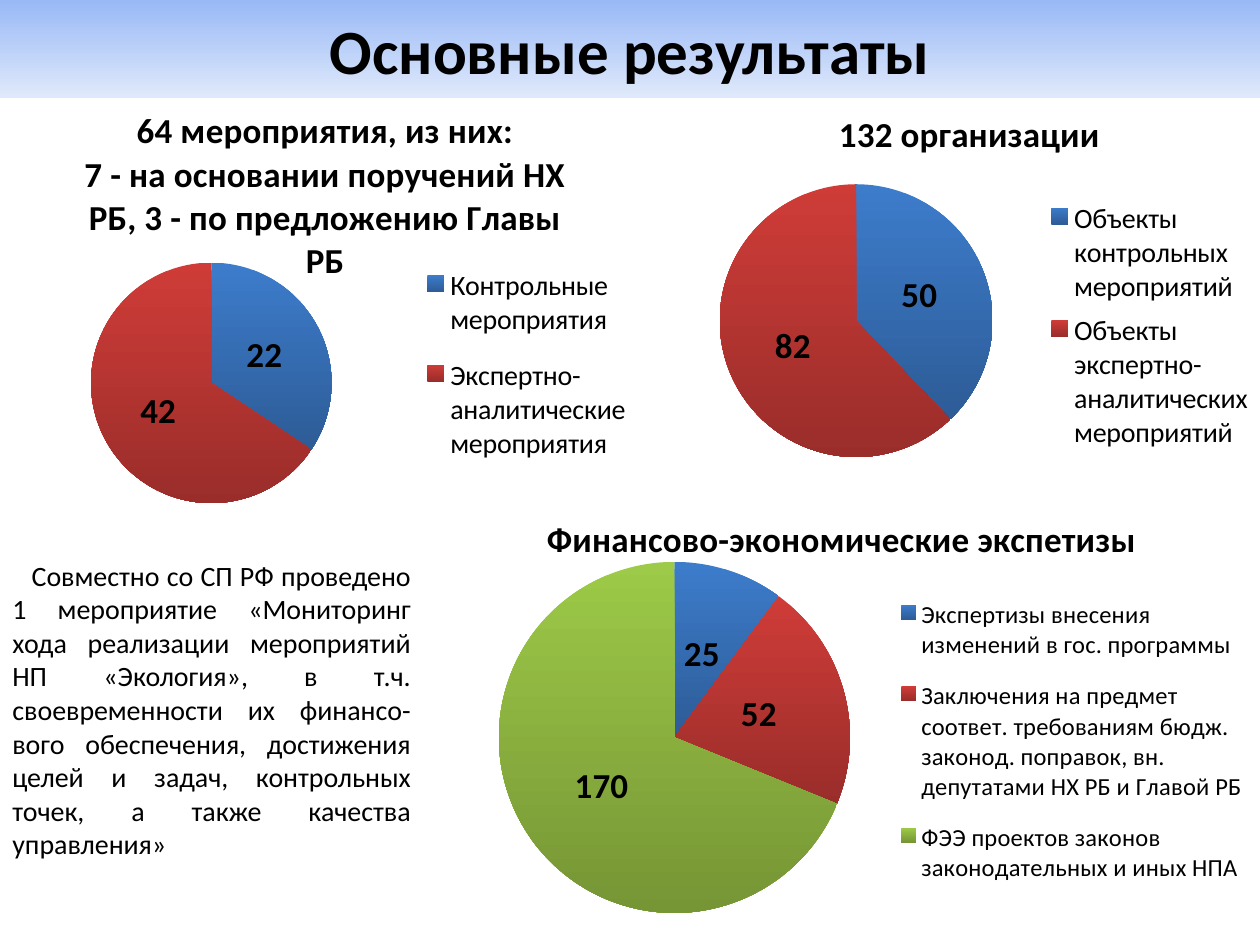
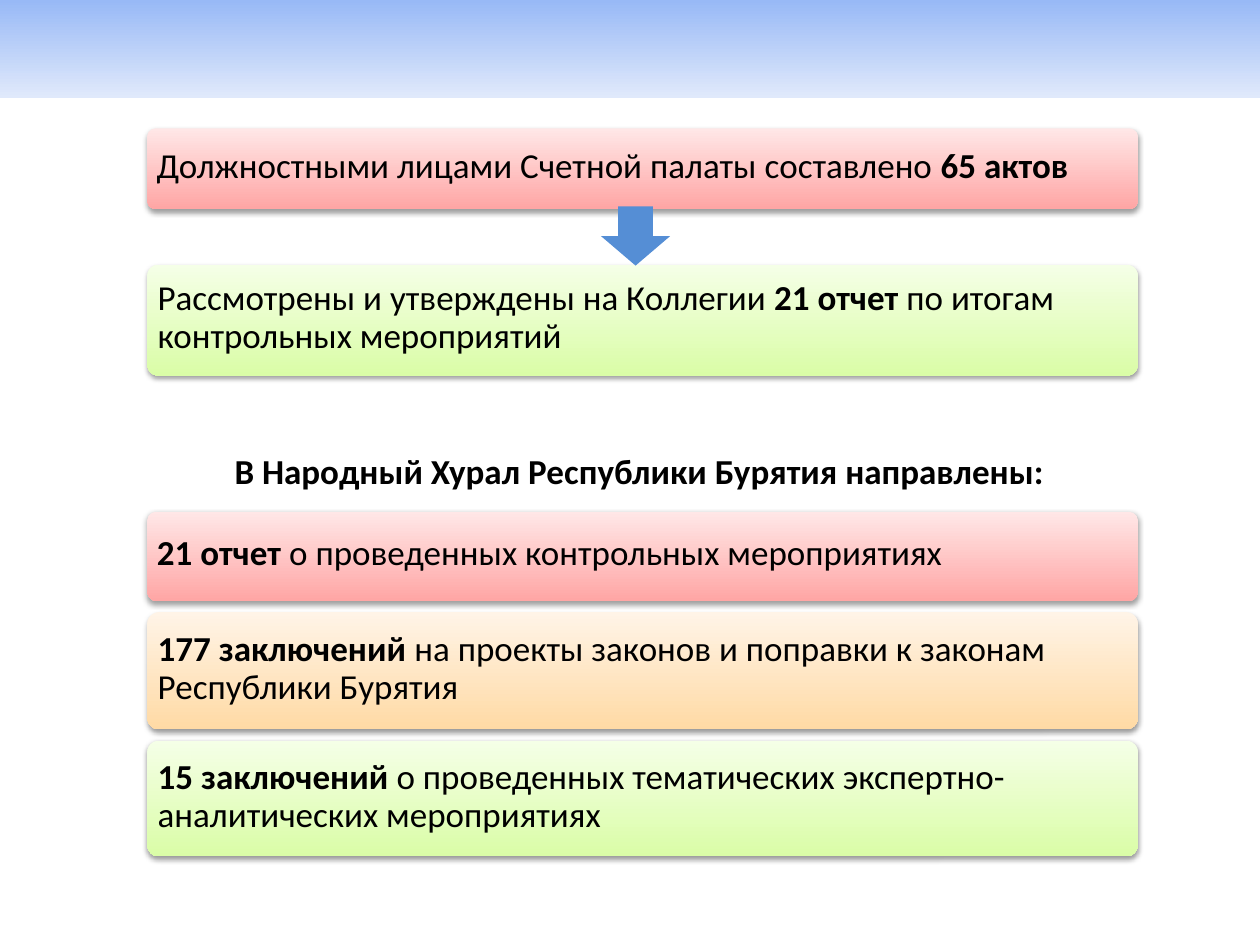
from lxml.etree import SubElement
from pptx import Presentation
from pptx.chart.data import CategoryChartData
from pptx.dml.color import RGBColor
from pptx.enum.chart import XL_CHART_TYPE, XL_LABEL_POSITION, XL_LEGEND_POSITION
from pptx.enum.shapes import MSO_SHAPE
from pptx.enum.text import MSO_ANCHOR, PP_ALIGN
from pptx.oxml import parse_xml
from pptx.oxml.ns import qn
from pptx.util import Pt

FONT = "Calibri"
BLACK = "000000"
SLIDE_WIDTH, SLIDE_HEIGHT = 720, 540
BAND_HEIGHT = 56
BAND = ("98B9F6", "E0E9FB")
PINK = ("FFE7E7", "FFA6A5")
PEACH = ("FFF4E7", "FFDAA5")
LIME = ("F5FFE7", "DAFDA7")
SLICES = [("3D7CCB", "2D5C97"), ("CF3C38", "9A2D2A"), ("9DCA48", "769535")]
ARROW = "558ED5"
PANEL_LEFT, PANEL_WIDTH = 84.2, 566
PANEL_GAP = 6.4


def rgb(hex_code):
    return RGBColor.from_string(hex_code)


def set_font(font, size, bold=False):
    font.name = FONT
    font.size = Pt(size)
    font.bold = bold
    font.color.rgb = rgb(BLACK)


def write(paragraph, *parts, size=20, bold=False, align=PP_ALIGN.LEFT, spacing=None, indent=0):
    paragraph.alignment = align
    if spacing:
        paragraph.line_spacing = spacing
    if indent:
        paragraph._p.get_or_add_pPr().set("indent", str(Pt(indent)))
    for part in parts:
        text, is_bold = part if isinstance(part, tuple) else (part, bold)
        run = paragraph.add_run()
        run.text = text
        set_font(run.font, size, is_bold)


def fill_down(fill, top_colour, bottom_colour):
    fill.gradient()
    fill.gradient_angle = 270
    for stop, colour in zip(fill.gradient_stops, (top_colour, bottom_colour)):
        stop.color.rgb = rgb(colour)


def add_block(slide, kind, left, top, width, height):
    block = slide.shapes.add_shape(kind, Pt(left), Pt(top), Pt(width), Pt(height))
    block.shadow.inherit = False
    block.line.fill.background()
    return block


def add_band(slide, title=None):
    band = add_block(slide, MSO_SHAPE.RECTANGLE, 0, 0, SLIDE_WIDTH, BAND_HEIGHT)
    fill_down(band.fill, *BAND)
    if title:
        write(band.text_frame.paragraphs[0], title, size=36, bold=True, align=PP_ALIGN.CENTER)


def add_caption(slide, left, top, width, height, text, **style):
    caption = slide.shapes.add_textbox(Pt(left), Pt(top), Pt(width), Pt(height))
    caption.text_frame.word_wrap = True
    write(caption.text_frame.paragraphs[0], text, **style)


def drop_shadow(block):
    effects = block._element.spPr.find(qn("a:effectLst"))
    shadow = SubElement(effects, qn("a:outerShdw"), blurRad=str(Pt(3.1)),
                        dist=str(Pt(1.6)), dir="5400000", rotWithShape="0")
    colour = SubElement(shadow, qn("a:srgbClr"), val=BLACK)
    SubElement(colour, qn("a:alpha"), val="38000")


def add_panel(slide, top, height, colours, *parts):
    panel = add_block(slide, MSO_SHAPE.ROUNDED_RECTANGLE, PANEL_LEFT, top, PANEL_WIDTH, height)
    panel.adjustments[0] = 0.1
    fill_down(panel.fill, *colours)
    drop_shadow(panel)
    frame = panel.text_frame
    frame.word_wrap = True
    frame.vertical_anchor = MSO_ANCHOR.MIDDLE
    frame.margin_left = frame.margin_right = Pt(4)
    frame.margin_top = Pt(4)
    frame.margin_bottom = Pt(6)
    write(frame.paragraphs[0], *parts, spacing=0.9)


def place(part, index, box, inner=False):
    for old in part.findall(qn("c:layout")):
        part.remove(old)
    target = '<c:layoutTarget val="inner"/>' if inner else ""
    sizes = "".join(f'<c:{tag} val="{value}"/>' for tag, value in zip("xywh", box))
    part.insert(index, parse_xml(
        '<c:layout xmlns:c="http://schemas.openxmlformats.org/drawingml/2006/chart">'
        f'<c:manualLayout>{target}<c:xMode val="edge"/><c:yMode val="edge"/>{sizes}'
        '</c:manualLayout></c:layout>'))


def add_pie(slide, frame, title, series_name, counts, pie_box, legend_box, legend_size=16):
    data = CategoryChartData()
    data.categories = list(counts)
    data.add_series(series_name, list(counts.values()))
    chart = slide.shapes.add_chart(XL_CHART_TYPE.PIE, *map(Pt, frame), data).chart
    set_font(chart.font, 16)

    chart.has_title = True
    heading = chart.chart_title.text_frame
    for number, line in enumerate(title):
        paragraph = heading.add_paragraph() if number else heading.paragraphs[0]
        write(paragraph, line, bold=True, align=PP_ALIGN.CENTER)

    chart.has_legend = True
    chart.legend.position = XL_LEGEND_POSITION.RIGHT
    chart.legend.include_in_layout = False
    set_font(chart.legend.font, legend_size)
    place(chart.legend._element, 1, legend_box)
    place(chart._chartSpace.chart.plotArea, 0, pie_box, inner=True)

    pie = chart.plots[0]
    pie.vary_by_categories = True
    pie.has_data_labels = True
    labels = pie.data_labels
    labels.show_value = True
    labels.show_percentage = False
    labels.position = XL_LABEL_POSITION.CENTER
    set_font(labels.font, 20, True)
    for number in range(len(counts)):
        slice_format = pie.series[0].points[number].format
        fill_down(slice_format.fill, *SLICES[number])
        slice_format.line.fill.background()


def build_results(slide):
    add_pie(slide, (0, 50.4, 371.5, 247.7),
            ["64 мероприятия, из них:",
             "7 - на основании поручений НХ РБ, 3 - по предложению Главы РБ"],
            "Series 1",
            {"Контрольные мероприятия": 22, "Экспертно-аналитические мероприятия": 42},
            (0.14, 0.4, 0.37, 0.56), (0.64, 0.37, 0.34, 0.54))
    add_pie(slide, (388, 50.4, 332, 219.6), ["132 организации"], "132 организации",
            {"Объекты контрольных мероприятий": 50,
             "Объекты экспертно-аналитических мероприятий": 82},
            (0.07, 0.25, 0.47, 0.71), (0.62, 0.27, 0.38, 0.7))
    expertise = "Финансово-экономические экспетизы"
    add_pie(slide, (242, 281.5, 478, 247.7), [expertise], expertise,
            {"Экспертизы внесения изменений в гос. программы": 25,
             "Заключения на предмет соответ. требованиям бюдж. законод. поправок, "
             "вн. депутатами НХ РБ и Главой РБ": 52,
             "ФЭЭ проектов законов законодательных и иных НПА": 170},
            (0.08, 0.16, 0.44, 0.81), (0.56, 0.2, 0.43, 0.75), legend_size=14)
    add_caption(slide, 0, 315.4, 242, 181.4,
                "Совместно со СП РФ проведено 1 мероприятие «Мониторинг хода реализации "
                "мероприятий НП «Экология», в т.ч. своевременности их финансо-вого "
                "обеспечения, достижения целей и задач, контрольных точек, а также "
                "качества управления»",
                size=16, align=PP_ALIGN.JUSTIFY, indent=11)
    add_band(slide, "Основные результаты")


def build_documents(slide):
    add_band(slide)
    add_panel(slide, 73.4, 46, PINK,
              "Должностными лицами Счетной палаты составлено ", ("65 актов", True))
    add_panel(slide, 151.2, 63.4, LIME, "Рассмотрены и утверждены на Коллегии ",
              ("21 отчет ", True), "по итогам контрольных мероприятий")
    arrow = add_block(slide, MSO_SHAPE.DOWN_ARROW, 343.4, 118, 39.6, 33.8)
    arrow.fill.solid()
    arrow.fill.fore_color.rgb = rgb(ARROW)

    add_caption(slide, PANEL_LEFT, 253.4, 562.3, 31.7,
                "В Народный Хурал Республики Бурятия направлены:",
                bold=True, align=PP_ALIGN.CENTER)
    sent_documents = [
        (51, PINK, "21 отчет ", "о проведенных контрольных мероприятиях"),
        (67, PEACH, "177 заключений ",
         "на проекты законов и поправки к законам Республики Бурятия"),
        (66.2, LIME, "15 заключений ",
         "о проведенных тематических экспертно-аналитических мероприятиях"),
    ]
    top = 292.4
    for height, colours, amount, subject in sent_documents:
        add_panel(slide, top, height, colours, (amount, True), subject)
        top += height + PANEL_GAP


def main():
    deck = Presentation()
    deck.slide_width, deck.slide_height = Pt(SLIDE_WIDTH), Pt(SLIDE_HEIGHT)
    for build in (build_results, build_documents):
        build(deck.slides.add_slide(deck.slide_layouts[6]))
    deck.save("out.pptx")


if __name__ == "__main__":
    main()
